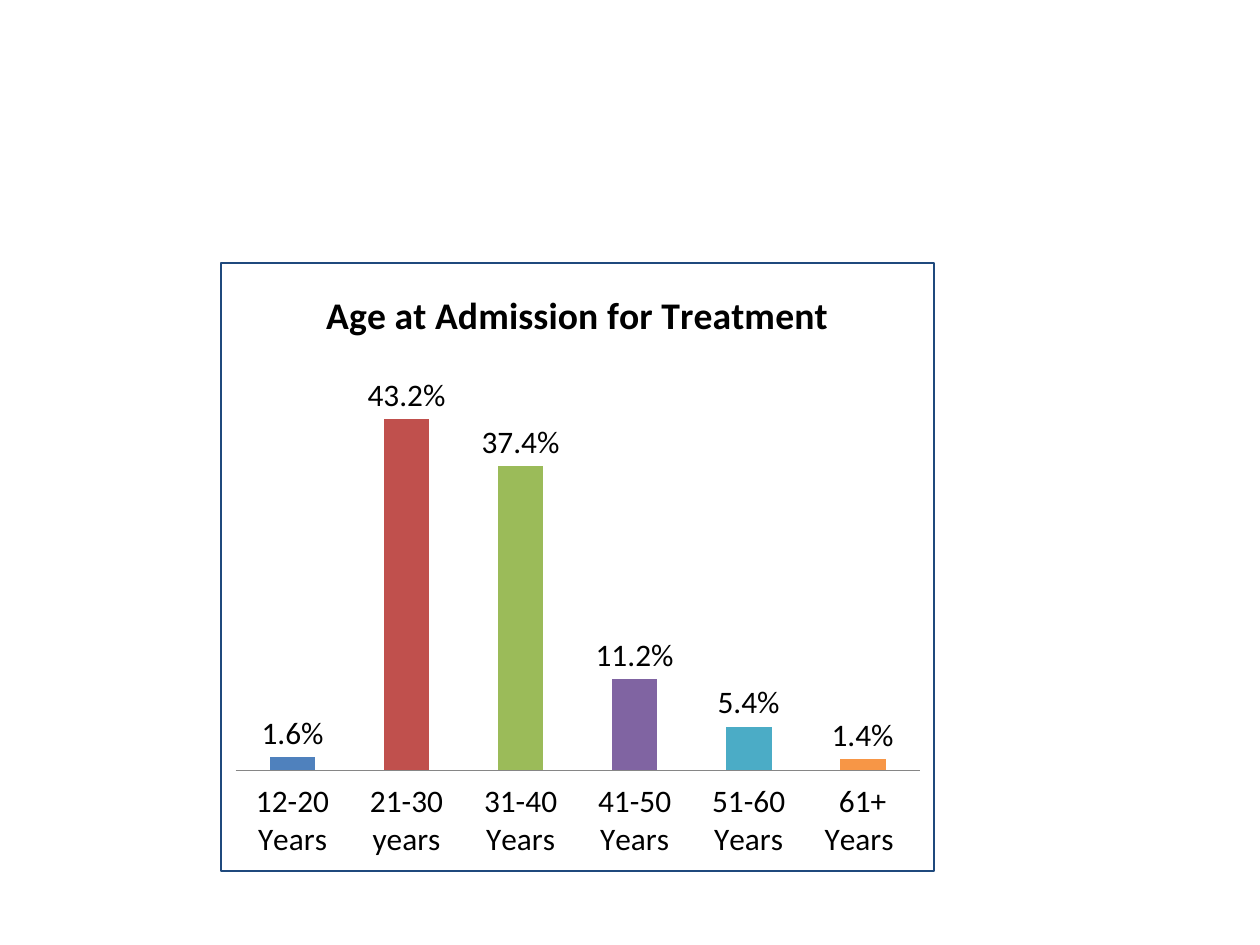
from lxml.etree import SubElement
from pptx import Presentation
from pptx.chart.data import CategoryChartData
from pptx.dml.color import RGBColor
from pptx.enum.chart import XL_CHART_TYPE, XL_LABEL_POSITION, XL_TICK_LABEL_POSITION, XL_TICK_MARK
from pptx.oxml import parse_xml
from pptx.oxml.ns import nsdecls
from pptx.util import Inches, Pt

BLACK = RGBColor(0x00, 0x00, 0x00)
WHITE = RGBColor(0xFF, 0xFF, 0xFF)
NAVY = RGBColor(0x1F, 0x49, 0x7D)
AXIS_GRAY = RGBColor(0x86, 0x86, 0x86)
FONT_NAME = "Calibri"
PERCENT_FORMAT = "0.0%"

# Age group, share of admissions, column colour
AGE_GROUPS = [
    ("12-20 Years", 0.016, RGBColor(0x4F, 0x81, 0xBD)),
    ("21-30 years", 0.432, RGBColor(0xC0, 0x50, 0x4D)),
    ("31-40 Years", 0.374, RGBColor(0x9B, 0xBB, 0x59)),
    ("41-50 Years", 0.112, RGBColor(0x80, 0x64, 0xA2)),
    ("51-60 Years", 0.054, RGBColor(0x4B, 0xAC, 0xC6)),
    ("61+ Years ", 0.014, RGBColor(0xF7, 0x96, 0x46)),
]


def set_font(font, size, bold=False):
    font.name = FONT_NAME
    font.size = Pt(size)
    font.bold = bold
    font.color.rgb = BLACK


def add_chart_border(chart, color, width):
    border = parse_xml(
        f'<c:spPr {nsdecls("c", "a")}>'
        f'<a:solidFill><a:srgbClr val="{WHITE}"/></a:solidFill>'
        f'<a:ln w="{Pt(width)}"><a:solidFill><a:srgbClr val="{color}"/></a:solidFill></a:ln>'
        "</c:spPr>"
    )
    chart.element.find("{*}chart").addnext(border)


def style_title(chart, text):
    chart.has_title = True
    chart.chart_title.include_in_layout = False
    paragraph = chart.chart_title.text_frame.paragraphs[0]
    paragraph.text = text
    set_font(paragraph.font, 21.6, bold=True)


def style_axes(chart):
    category_axis = chart.category_axis
    category_axis.major_tick_mark = XL_TICK_MARK.NONE
    category_axis.tick_label_position = XL_TICK_LABEL_POSITION.LOW
    category_axis.format.line.color.rgb = AXIS_GRAY
    category_axis.format.line.width = Pt(0.75)

    value_axis = chart.value_axis
    value_axis.visible = False
    value_axis.has_major_gridlines = False
    value_axis.minimum_scale = 0
    value_axis.maximum_scale = 0.5


def style_columns(plot):
    plot.gap_width = 150
    plot.overlap = -25
    plot.vary_by_categories = True
    for index, (_, _, color) in enumerate(AGE_GROUPS):
        fill = plot.series[0].points[index].format.fill
        fill.solid()
        fill.fore_color.rgb = color

    plot.has_data_labels = True
    labels = plot.data_labels
    labels.show_value = True
    labels.number_format = PERCENT_FORMAT
    labels.number_format_is_linked = False
    labels.position = XL_LABEL_POSITION.OUTSIDE_END
    set_font(labels.font, 18)


def add_age_chart(slide):
    chart_data = CategoryChartData(number_format=PERCENT_FORMAT)
    chart_data.categories = [name for name, _, _ in AGE_GROUPS]
    chart_data.add_series("Series 1", [share for _, share, _ in AGE_GROUPS])
    chart = slide.shapes.add_chart(
        XL_CHART_TYPE.COLUMN_CLUSTERED,
        Inches(1.75), Inches(2.08), Inches(5.67), Inches(4.84), chart_data,
    ).chart
    set_font(chart.font, 18)
    chart.has_legend = False
    add_chart_border(chart, NAVY, 1)
    style_title(chart, "Age at Admission for Treatment")
    style_axes(chart)
    style_columns(chart.plots[0])


def main():
    presentation = Presentation()
    presentation.slide_width = Inches(10)
    presentation.slide_height = Inches(7.5)
    slide = presentation.slides.add_slide(presentation.slide_layouts[6])
    add_age_chart(slide)
    presentation.save("out.pptx")


if __name__ == "__main__":
    main()
